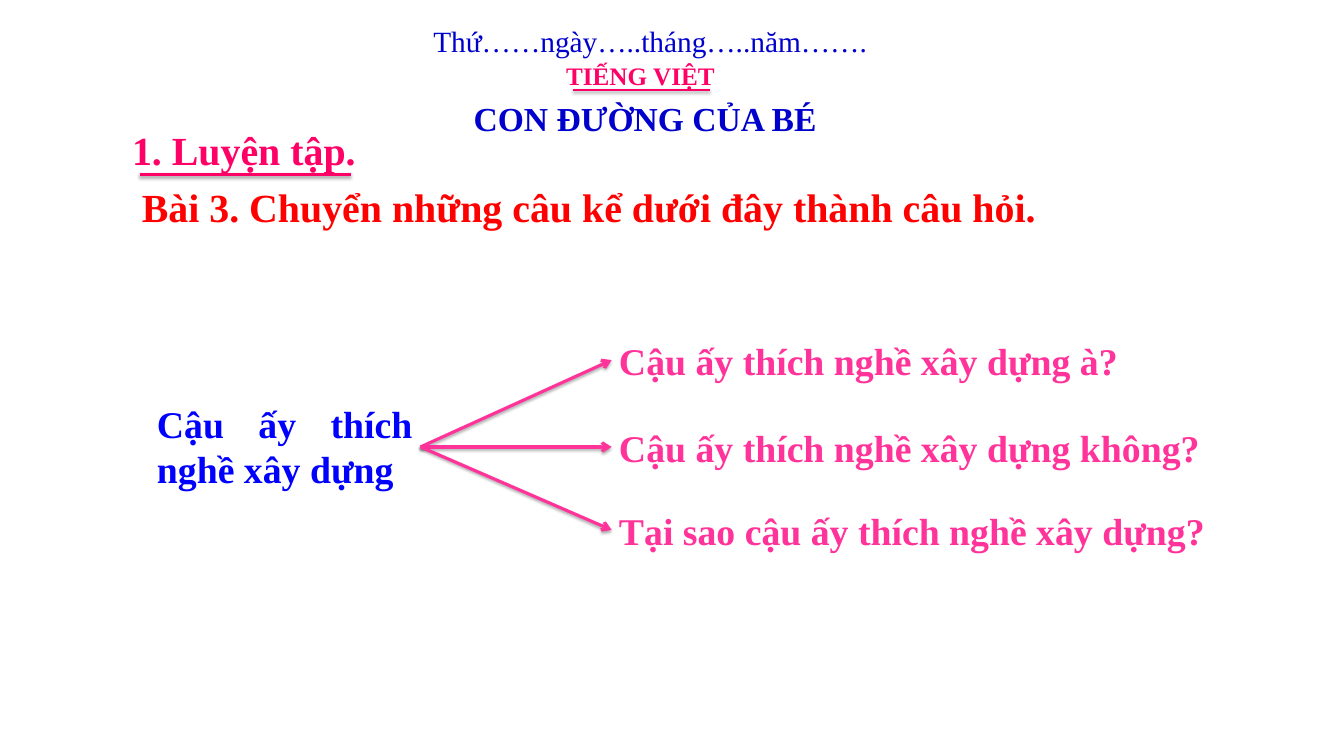
"""Build a Vietnamese lesson slide that turns a statement into three questions."""
from dataclasses import dataclass

from pptx import Presentation
from pptx.dml.color import RGBColor
from pptx.enum.shapes import MSO_CONNECTOR
from pptx.enum.text import MSO_ANCHOR, MSO_AUTO_SIZE, PP_ALIGN
from pptx.oxml import parse_xml
from pptx.oxml.ns import nsdecls
from pptx.util import Inches, Pt

STRAIGHT = MSO_CONNECTOR.STRAIGHT
TOP = MSO_ANCHOR.TOP
FIXED = MSO_AUTO_SIZE.NONE
LEFT, CENTER, JUSTIFY = PP_ALIGN.LEFT, PP_ALIGN.CENTER, PP_ALIGN.JUSTIFY


@dataclass(frozen=True)
class Theme:
    font: str = "Times New Roman"
    navy: str = "0000CC"
    blue: str = "0000FF"
    rose: str = "FF0066"
    pink: str = "FF3399"
    red: str = "FF0000"
    small: int = 24
    date: int = 28
    title: int = 32
    body: int = 36
    head: int = 38


theme = Theme()
deck = Presentation()
deck.slide_width, deck.slide_height = Inches(17.8), Inches(10)
slide = deck.slides.add_slide(deck.slide_layouts[5])
shapes = slide.shapes


def write(text, *, box, size, color, bold=True, align=LEFT, shape=None):
    area = [Inches(n) for n in box]
    if shape is None:
        shape = shapes.add_textbox(*area)
    shape.left, shape.top, shape.width, shape.height = area
    frame = shape.text_frame
    frame.word_wrap = True
    frame.auto_size = FIXED
    frame.vertical_anchor = TOP
    para = frame.paragraphs[0]
    para.alignment = align
    run = para.add_run()
    run.text = text
    run.font.name = theme.font
    run.font.size = Pt(size)
    run.font.bold = bold
    run.font.color.rgb = RGBColor.from_string(color)


def draw(start, end, *, color, width=3, arrow=False):
    ends = [Inches(n) for n in (*start, *end)]
    link = shapes.add_connector(STRAIGHT, *ends)
    link.line.width = Pt(width)
    link.line.color.rgb = RGBColor.from_string(color)
    if arrow:
        tip = parse_xml(f'<a:tailEnd {nsdecls("a")} type="arrow"/>')
        link.line._get_or_add_ln().append(tip)
    shade = parse_xml(
        f'<a:effectLst {nsdecls("a")}>'
        f'<a:outerShdw blurRad="{Pt(3.1)}" dist="{Pt(1.8)}" dir="5400000" rotWithShape="0">'
        '<a:srgbClr val="000000"><a:alpha val="35000"/></a:srgbClr>'
        '</a:outerShdw></a:effectLst>')
    link._element.spPr.append(shade)


write("Thứ……ngày…..tháng…..năm…….", box=(5.64, 0.26, 6.4, 0.57),
      size=theme.date, color=theme.navy, bold=False)
write("TIẾNG VIỆT", box=(7.4, 0.75, 2.5, 0.5), size=theme.small, color=theme.rose)
draw((7.59, 1.19), (9.4, 1.19), color=theme.rose, width=2)
write("CON ĐƯỜNG CỦA BÉ", box=(6.15, 1.25, 4.79, 0.64), size=theme.title,
      color=theme.navy, align=CENTER, shape=shapes.title)

write("1. Luyện tập.", box=(1.65, 1.62, 4.58, 0.74), size=theme.head, color=theme.rose)
draw((1.85, 2.31), (4.65, 2.31), color=theme.rose)
write("Bài 3. Chuyển những câu kể dưới đây thành câu hỏi.",
      box=(1.78, 2.37, 15.14, 0.74), size=theme.head, color=theme.red, align=JUSTIFY)

write("Cậu ấy thích nghề xây dựng", box=(1.98, 5.26, 3.58, 1.31),
      size=theme.body, color=theme.blue, align=JUSTIFY)
asks = [
    ("Cậu ấy thích nghề xây dựng à?", 4.77),
    ("Cậu ấy thích nghề xây dựng không?", 5.92),
    ("Tại sao cậu ấy thích nghề xây dựng?", 7.02),
]
for ask, mid in asks:
    draw((5.57, 5.92), (8.1, mid), color=theme.pink, arrow=True)
    write(ask, box=(8.1, mid - 0.35, 8.5, 0.71), size=theme.body, color=theme.pink)

deck.save("out.pptx")
